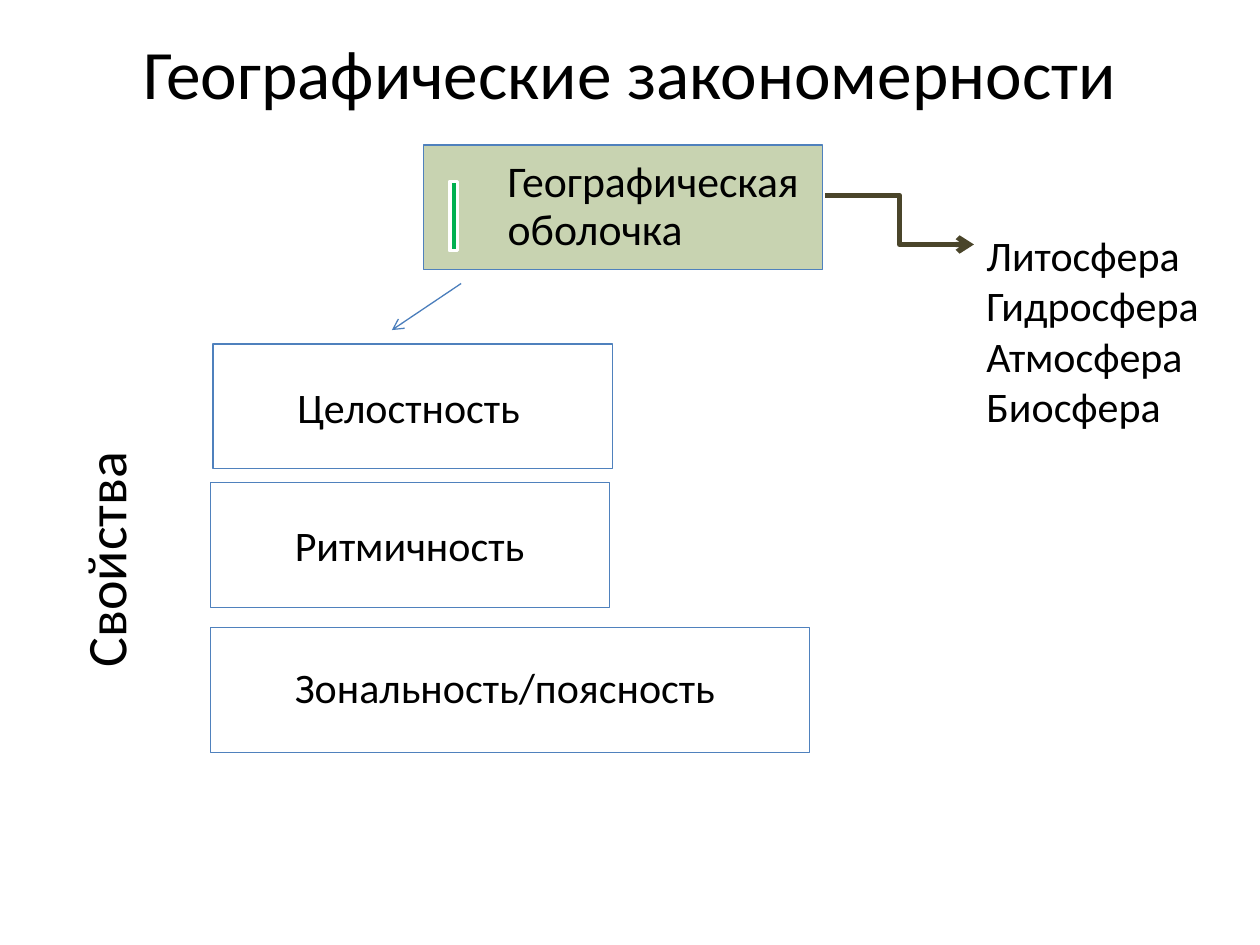
"""Build the slide on geographic regularities: the shell, its spheres and its properties."""
from lxml import etree
from pptx import Presentation
from pptx.dml.color import RGBColor
from pptx.enum.shapes import MSO_CONNECTOR, MSO_SHAPE
from pptx.enum.text import MSO_ANCHOR, PP_ALIGN
from pptx.oxml.ns import qn
from pptx.util import Inches, Pt

RECT = MSO_SHAPE.RECTANGLE
STRAIGHT, ELBOW = MSO_CONNECTOR.STRAIGHT, MSO_CONNECTOR.ELBOW
MIDDLE, TOP = MSO_ANCHOR.MIDDLE, MSO_ANCHOR.TOP
LEFT, CENTER = PP_ALIGN.LEFT, PP_ALIGN.CENTER
FONT, BLACK, BLUE, GREEN, WHITE = "Calibri", "000000", "4F81BD", "00B050", "FFFFFF"
BOX_W, BOX_H = 3.17, 0.99

TITLE = "Географические закономерности"
SPHERES = ["Литосфера", "Гидросфера", "Атмосфера", "Биосфера"]
SIDE_LABEL = "Свойства"
# text, left, top, width, fill, size, line spacing
BOXES = [
    ("Географическая оболочка", 3.36, 1.15, BOX_W, "77933C", 25, 0.9),
    ("Целостность", 1.69, 2.73, BOX_W, WHITE, 24, 1.0),
    ("Ритмичность", 1.67, 3.83, BOX_W, WHITE, 24, 1.0),
    ("Зональность/поясность", 1.67, 4.98, 1.5 * BOX_W, WHITE, 24, 0.9),
]
# kind, start, end, colour, width
ARROWS = [
    (ELBOW, (6.55, 1.55), (7.73, 1.94), "4A452A", 3),
    (STRAIGHT, (3.66, 2.25), (3.11, 2.62), "4B7EBC", 0.75),
]


def rgb(value):
    return RGBColor.from_string(value)


def inches(*values):
    return [Inches(v) for v in values]


def write(shape, lines, size, align=LEFT, anchor=TOP, spacing=1.0):
    tf = shape.text_frame
    tf.text = "\n".join(lines)
    tf.vertical_anchor = anchor
    for p in tf.paragraphs:
        p.alignment, p.line_spacing = align, spacing
        for r in p.runs:
            r.font.name, r.font.size = FONT, Pt(size)
            r.font.color.rgb = rgb(BLACK)
    return tf


def add_rect(slide, box, fill, line, width):
    sp = slide.shapes.add_shape(RECT, *inches(*box))
    sp.shadow.inherit = False
    sp.fill.solid()
    sp.fill.fore_color.rgb = rgb(fill)
    sp.line.color.rgb = rgb(line)
    sp.line.width = Pt(width)
    return sp


def add_box(slide, text, left, top, width, fill, size, spacing):
    sp = add_rect(slide, (left, top, width, BOX_H), fill, BLUE, 0.75)
    color = sp.fill._xPr.find(qn("a:solidFill"))[0]
    etree.SubElement(color, qn("a:alpha"), val="40000")
    tf = write(sp, [text], size, anchor=MIDDLE, spacing=spacing)
    tf.word_wrap = True
    tf.margin_left, tf.margin_top, tf.margin_right, tf.margin_bottom = inches(0.67, 0.1, 0.1, 0.1)


def add_arrow(slide, kind, start, end, color, width):
    line = slide.shapes.add_connector(kind, *inches(*start, *end))
    line.line.color.rgb = rgb(color)
    line.line.width = Pt(width)
    etree.SubElement(line.line._get_or_add_ln(), qn("a:tailEnd"), type="arrow")
    etree.SubElement(line._element.spPr, qn("a:effectLst"))


def main():
    prs = Presentation()
    prs.slide_width, prs.slide_height = inches(10, 7.5)
    s = prs.slides.add_slide(prs.slide_layouts[5])

    title = s.shapes.title
    title.left, title.top, title.width, title.height = inches(0.5, 0.3, 9, 0.54)
    write(title, [TITLE], 39.6, CENTER, MIDDLE)

    for box in BOXES:
        add_box(s, *box)
    add_rect(s, (3.57, 1.44, 0.06, 0.55), GREEN, WHITE, 2)

    spheres = s.shapes.add_textbox(*inches(7.73, 1.77, 1.91, 1.72))
    write(spheres, SPHERES, 24).word_wrap = False

    label = s.shapes.add_textbox(*inches(0.51, 3.28, 0.74, 2.32))
    tf = write(label, [SIDE_LABEL], 32, CENTER)
    tf.word_wrap = True
    tf._txBody.bodyPr.set("vert", "vert270")

    for arrow in ARROWS:
        add_arrow(s, *arrow)
    prs.save("out.pptx")


if __name__ == "__main__":
    main()
